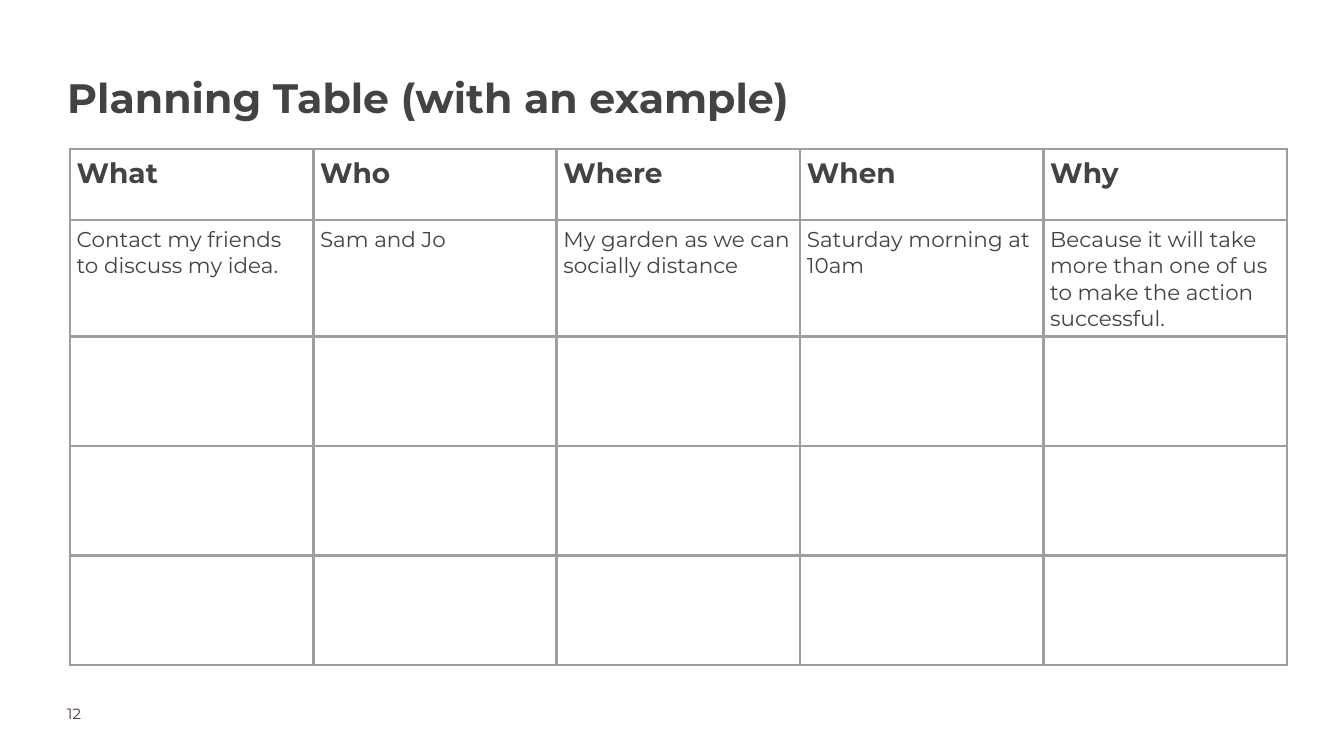
from dataclasses import dataclass
from typing import NamedTuple

from lxml import etree
from pptx import Presentation
from pptx import util as u
from pptx.dml import color as c
from pptx.oxml import ns


@dataclass(frozen=True)
class Theme:
    font: str = "Montserrat"
    ink: str = "434343"
    plum: str = "4B3241"
    rule: str = "9E9E9E"
    title: int = 44
    head: int = 30
    body: int = 23
    note: int = 16
    line: int = 3
    pad: float = 7.2


class Label(NamedTuple):
    text: str
    left: float
    top: float
    wide: float
    high: float
    size: int
    tint: str
    bold: bool = False
    lead: float = 1.0


THEME = Theme()
LABELS = [
    Label("Planning Table (with an example)", 72, 69.84, 1039.68, 128.16,
          THEME.title, THEME.ink, True, 1.15),
    Label("12", 72, 754.56, 113.04, 28.08, THEME.note, THEME.plum),
]
PLAN = [
    ("What", "Contact my friends to discuss my idea."),
    ("Who", "Sam and Jo"),
    ("Where", "My garden as we can socially distance"),
    ("When", "Saturday morning at 10am"),
    ("Why", "Because it will take more than one of us to make the action successful."),
]
LEFT, TOP, WIDE = 74.88, 159.84, 260.8
HEIGHTS = [76] + [117.4] * 4


def style(frame, size: int, tint: str, bold: bool, lead: float = 1.0) -> None:
    for para in frame.paragraphs:
        para.line_spacing = lead
        for run in para.runs:
            font = run.font
            font.name, font.size, font.bold = THEME.font, u.Pt(size), bold
            font.color.rgb = c.RGBColor.from_string(tint)


def pad(box, gap: float) -> None:
    box.margin_left = box.margin_right = u.Pt(gap)
    box.margin_top = box.margin_bottom = u.Pt(gap)


def draw_label(slide, item: Label) -> None:
    box = slide.shapes.add_textbox(
        u.Pt(item.left), u.Pt(item.top), u.Pt(item.wide), u.Pt(item.high))
    frame = box.text_frame
    frame.word_wrap = True
    pad(frame, 0)
    frame.text = item.text
    style(frame, item.size, item.tint, item.bold, item.lead)


def edge(cell) -> None:
    props = cell._tc.get_or_add_tcPr()
    for side in ("lnL", "lnR", "lnT", "lnB"):
        line = etree.SubElement(props, ns.qn(f"a:{side}"), w=str(u.Pt(THEME.line)))
        fill = etree.SubElement(line, ns.qn("a:solidFill"))
        etree.SubElement(fill, ns.qn("a:srgbClr"), val=THEME.rule)


def draw_plan(slide) -> None:
    table = slide.shapes.add_table(
        len(HEIGHTS), len(PLAN), u.Pt(LEFT), u.Pt(TOP),
        u.Pt(WIDE * len(PLAN)), u.Pt(sum(HEIGHTS))).table
    table.first_row = table.horz_banding = False
    for col in table.columns:
        col.width = u.Pt(WIDE)
    for row, high in zip(table.rows, HEIGHTS):
        row.height = u.Pt(high)
    for cell in table.iter_cells():
        pad(cell, THEME.pad)
        edge(cell)
        cell.fill.background()
    for x, words in enumerate(PLAN):
        for y, word in enumerate(words):
            frame = table.cell(y, x).text_frame
            frame.text = word
            head = y == 0
            style(frame, THEME.head if head else THEME.body, THEME.ink, head)


def main() -> None:
    deck = Presentation()
    deck.slide_width, deck.slide_height = u.Pt(1440), u.Pt(810)
    slide = deck.slides.add_slide(deck.slide_layouts[6])
    for item in LABELS:
        draw_label(slide, item)
    draw_plan(slide)
    deck.save("out.pptx")


if __name__ == "__main__":
    main()
